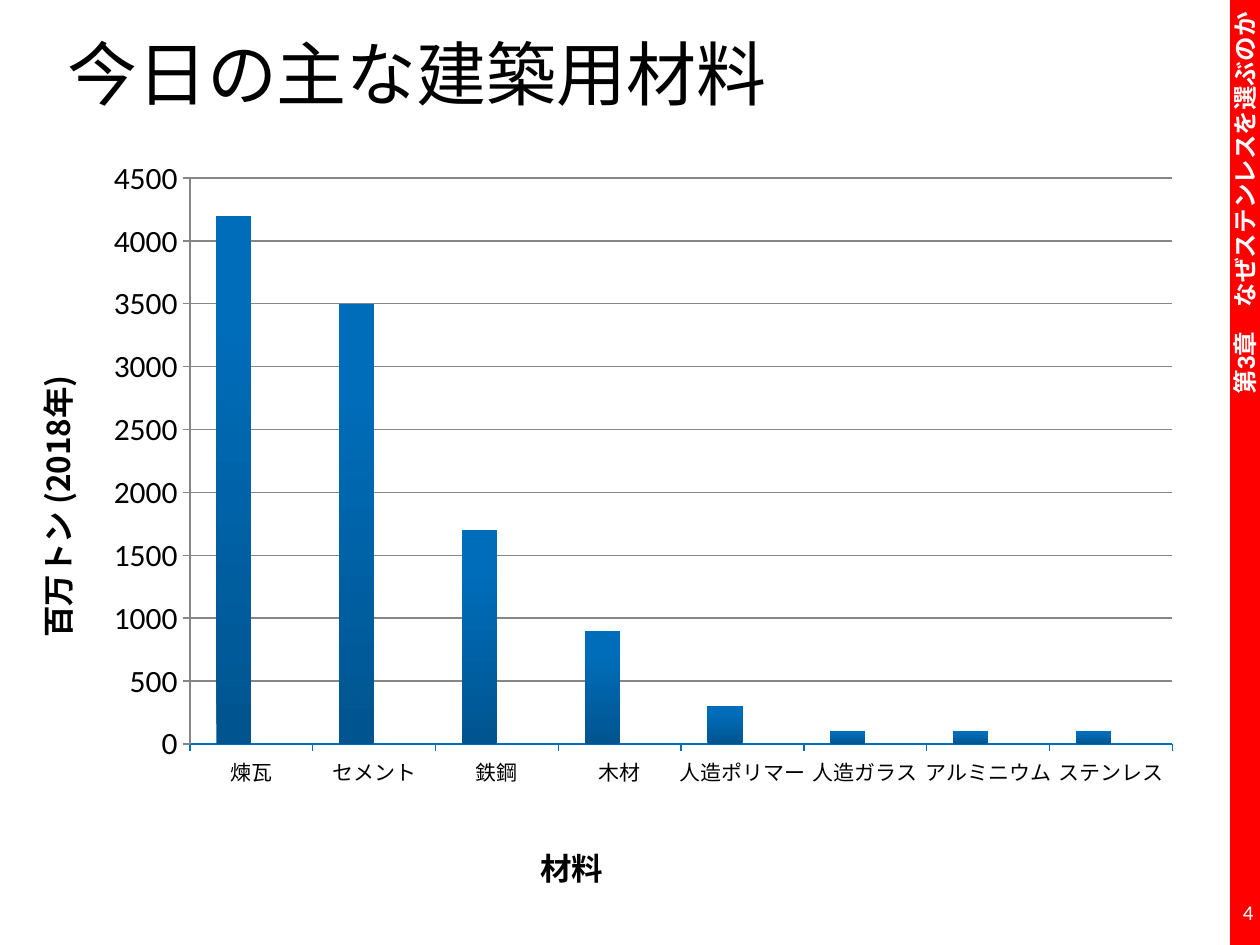
from pptx import Presentation, util as u
from pptx.chart.data import CategoryChartData
from pptx.dml.color import RGBColor
from pptx.enum import chart as ch, shapes, text
from pptx.oxml import parse_xml
from pptx.oxml.ns import nsdecls, qn

TITLE = "今日の主な建築用材料"
CHAPTER = "第3章　なぜステンレスを選ぶのか"
VALUE_TITLE = "百万トン (2018年)"
CATEGORY_TITLE = "材料"
PAGE = "4"
MATERIALS = [
    ("煉瓦", 4200), ("セメント", 3500), ("鉄鋼", 1700), ("木材", 900),
    ("人造ポリマー", 300), ("人造ガラス", 100), ("アルミニウム", 100), ("ステンレス", 100),
]
GRADIENT = [(0, "00548F"), (80, "006DBA"), (100, "006DBB")]
PLOT = dict(x=0.087, y=0.032, w=0.892, h=0.773)
CATEGORY_TITLE_AT = dict(x=0.4, y=0.93)
JP = "Noto Sans CJK JP"


def rgb(value):
    return RGBColor.from_string(value)


def style(font, size, name, color="000000", bold=False):
    font.size, font.name, font.bold = u.Pt(size), name, bold
    font.color.rgb = rgb(color)
    rpr = font._element
    for tag in ("a:ea", "a:cs"):
        if name == JP and rpr.find(qn(tag)) is None:
            rpr.append(parse_xml(f'<{tag} {nsdecls("a")} typeface="{name}"/>'))


def place(sp, left, top, width, height):
    sp.left, sp.top, sp.width, sp.height = map(u.Cm, (left, top, width, height))


def write(sp, content, align, size, name, color="000000", bold=False):
    tf = sp.text_frame
    tf.word_wrap, tf.vertical_anchor = True, text.MSO_ANCHOR.MIDDLE
    tf.text = content
    p = tf.paragraphs[0]
    p.alignment = align
    style(p.runs[0].font, size, name, color, bold)
    return tf


def layout(inner=False, **parts):
    modes = "".join(f'<c:{k}Mode val="edge"/>' for k in "xy")
    sizes = "".join(f'<c:{k} val="{v}"/>' for k, v in parts.items())
    target = '<c:layoutTarget val="inner"/>' if inner else ""
    return parse_xml(f'<c:layout {nsdecls("c")}><c:manualLayout>{target}{modes}{sizes}'
                     '</c:manualLayout></c:layout>')


def set_layout(parent, new, before):
    for old in parent.findall(qn("c:layout")):
        parent.remove(old)
    parent.insert(before, new)


def add_material_chart(s):
    data = CategoryChartData()
    data.categories = [name for name, _ in MATERIALS]
    data.add_series("Series 1", [value for _, value in MATERIALS])
    data.add_series("Series 2", [0] + [None] * (len(MATERIALS) - 1))
    box = map(u.Cm, (1.9, 3.12, 22.2, 15.01))
    chart = s.shapes.add_chart(ch.XL_CHART_TYPE.COLUMN_CLUSTERED, *box, data).chart
    chart.has_legend = chart.has_title = False
    style(chart.font, 18, "Calibri")

    plot = chart.plots[0]
    plot.gap_width, plot.overlap, plot.vary_by_categories = 150, 0, False
    for series in plot.series:
        series.invert_if_negative = False
        series.format.fill.solid()
        series.format.fill.fore_color.rgb = rgb("0070C0")
    stops = "".join(f'<a:gs pos="{pos * 1000}"><a:srgbClr val="{c}"/></a:gs>' for pos, c in GRADIENT)
    sppr = plot.series[0].format.fill._xPr
    sppr.replace(sppr.find(qn("a:solidFill")), parse_xml(
        f'<a:gradFill {nsdecls("a")} rotWithShape="1"><a:gsLst>{stops}</a:gsLst>'
        '<a:lin ang="16200000" scaled="0"/></a:gradFill>'))

    cat, val = chart.category_axis, chart.value_axis
    val.minimum_scale, val.maximum_scale, val.major_unit = 0, 4500, 500
    val.has_major_gridlines = True
    for line, color in ((cat.format.line, "006EBC"), (val.format.line, "868686"),
                        (val.major_gridlines.format.line, "868686")):
        line.color.rgb, line.width = rgb(color), u.Pt(0.75)
    for axis, size in ((cat, 12), (val, 18)):
        axis.major_tick_mark = ch.XL_TICK_MARK.OUTSIDE
        axis.minor_tick_mark = ch.XL_TICK_MARK.NONE
        style(axis.tick_labels.font, size, "Calibri")
    tf = cat.axis_title.text_frame
    tf.text = CATEGORY_TITLE
    style(tf.paragraphs[0].runs[0].font, 18, "Calibri", bold=True)
    set_layout(cat.axis_title._element, layout(**CATEGORY_TITLE_AT), 1)
    set_layout(chart._chartSpace.chart.plotArea, layout(True, **PLOT), 0)


def main():
    """Build the slide on today's main building materials."""
    prs = Presentation()
    prs.slide_width, prs.slide_height = u.Cm(25.4), u.Cm(19.05)
    s = prs.slides.add_slide(prs.slide_layouts[5])
    left, center, right = text.PP_ALIGN.LEFT, text.PP_ALIGN.CENTER, text.PP_ALIGN.RIGHT

    band = s.shapes.add_shape(shapes.MSO_SHAPE.RECTANGLE, 0, 0, 0, 0)
    place(band, 24.8, 0, 0.6, 19.05)
    band.shadow.inherit = False
    band.fill.solid()
    band.fill.fore_color.rgb = rgb("FF0000")
    band.line.fill.background()
    tf = write(band, CHAPTER, right, 14, "Arial", "FFFFFF", True)
    tf._txBody.bodyPr.set("vert", "vert270")

    add_material_chart(s)

    place(s.shapes.title, 1.1, 0.36, 22.86, 2.21)
    write(s.shapes.title, TITLE, left, 40, JP)

    label = s.shapes.add_textbox(0, 0, 0, 0)
    place(label, -2.94, 9.7, 8.2, 1.02)
    label.rotation = 270
    write(label, VALUE_TITLE, center, 18, JP, bold=True)

    number = s.shapes.add_textbox(0, 0, 0, 0)
    place(number, 24.18, 17.88, 1.09, 1.02)
    tf = write(number, PAGE, right, 12, "Calibri", "FFFFFF")
    tf.margin_left = tf.margin_right = tf.margin_top = tf.margin_bottom = 0

    prs.save("out.pptx")


if __name__ == "__main__":
    main()
